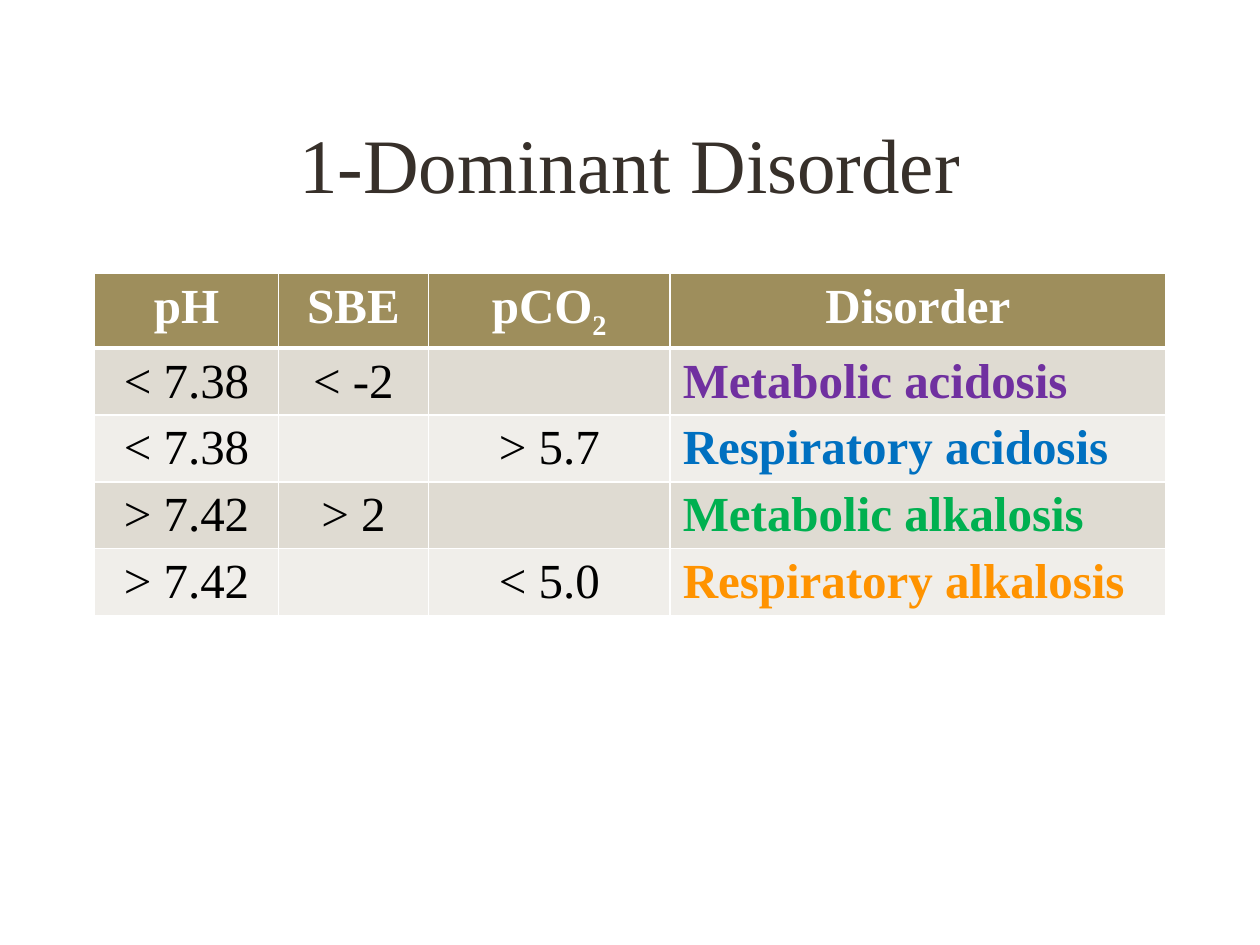
from dataclasses import dataclass

from lxml import etree
from pptx import Presentation
from pptx.dml.color import RGBColor
from pptx.enum.text import MSO_ANCHOR, PP_ALIGN
from pptx.oxml.ns import qn
from pptx.util import Inches, Pt

LEFT, CENTER = PP_ALIGN.LEFT, PP_ALIGN.CENTER
MIDDLE = MSO_ANCHOR.MIDDLE
TITLE_ONLY = 5


@dataclass(frozen=True)
class Theme:
    font: str = "Times New Roman"
    title_size: int = 44
    table_size: int = 28
    title: str = "37302A"
    header_fill: str = "9E8E5C"
    bands: tuple = ("DFDBD2", "F0EEEA")
    white: str = "FFFFFF"
    value: str = "000000"
    thin: int = 1
    thick: int = 3


THEME = Theme()
COLUMN_WIDTHS = (1.46, 1.19, 1.92, 3.93)
ROW_HEIGHT = 0.5
# Each heading is its text and its subscript
HEADINGS = (("pH", ""), ("SBE", ""), ("pCO", "2"), ("Disorder", ""))
# pH, SBE, pCO2, disorder, disorder colour
DISORDERS = (
    ("< 7.38", "< -2", "", "Metabolic acidosis", "7030A0"),
    ("< 7.38", "", "> 5.7", "Respiratory acidosis", "0070C0"),
    ("> 7.42", "> 2", "", "Metabolic alkalosis", "00B050"),
    ("> 7.42", "", "< 5.0", "Respiratory alkalosis", "FF9300"),
)


def add_run(paragraph, text, size, color, bold=False, subscript=False):
    run = paragraph.add_run()
    run.text = text
    formats = {"name": THEME.font, "size": Pt(size), "bold": bold}
    for attribute, value in formats.items():
        setattr(run.font, attribute, value)
    run.font.color.rgb = RGBColor.from_string(color)
    if subscript:
        run._r.get_or_add_rPr().set("baseline", "-25000")


def add_title(slide, text):
    title = slide.shapes.title
    place = {"left": 0.75, "top": 0.67, "width": 8.5, "height": 1.25}
    for attribute, value in place.items():
        setattr(title, attribute, Inches(value))
    title.text_frame.vertical_anchor = MIDDLE
    paragraph = title.text_frame.paragraphs[0]
    paragraph.alignment = CENTER
    add_run(paragraph, text, THEME.title_size, THEME.title)


def set_borders(cell, top, bottom):
    widths = {"L": THEME.thin, "R": THEME.thin, "T": top, "B": bottom}
    properties = cell._tc.get_or_add_tcPr()
    for side, width in widths.items():
        line = etree.SubElement(properties, qn(f"a:ln{side}"), w=str(Pt(width)))
        fill = etree.SubElement(line, qn("a:solidFill"))
        etree.SubElement(fill, qn("a:srgbClr"), val=THEME.white)


def style_cell(cell, fill, top=THEME.thin, bottom=THEME.thin):
    # Borders must come before the fill in the cell properties
    set_borders(cell, top, bottom)
    cell.fill.solid()
    cell.fill.fore_color.rgb = RGBColor.from_string(fill)


def write_cell(cell, text, color, bold=False, align=CENTER, subscript=""):
    paragraph = cell.text_frame.paragraphs[0]
    paragraph.alignment = align
    if text:
        add_run(paragraph, text, THEME.table_size, color, bold)
    if subscript:
        add_run(paragraph, subscript, THEME.table_size, color, bold, True)


def add_disorder_table(slide):
    row_count = len(DISORDERS) + 1
    table = slide.shapes.add_table(
        row_count, len(COLUMN_WIDTHS), Inches(0.75), Inches(2.17),
        Inches(sum(COLUMN_WIDTHS)), Inches(ROW_HEIGHT * row_count)).table
    for column, width in zip(table.columns, COLUMN_WIDTHS):
        column.width = Inches(width)

    # Header row
    for cell, (text, subscript) in zip(table.rows[0].cells, HEADINGS):
        style_cell(cell, THEME.header_fill, bottom=THEME.thick)
        write_cell(cell, text, THEME.white, bold=True, subscript=subscript)

    # Banded rows, each ending in its coloured disorder
    for index, (*values, disorder, color) in enumerate(DISORDERS):
        cells = list(table.rows[index + 1].cells)
        top = THEME.thin if index else THEME.thick
        for cell in cells:
            style_cell(cell, THEME.bands[index % 2], top=top)
        for cell, value in zip(cells, values):
            write_cell(cell, value, THEME.value)
        write_cell(cells[-1], disorder, color, bold=True, align=LEFT)


def main():
    presentation = Presentation()
    presentation.slide_width = Inches(10)
    presentation.slide_height = Inches(7.5)
    slide = presentation.slides.add_slide(presentation.slide_layouts[TITLE_ONLY])
    add_title(slide, "1-Dominant Disorder")
    add_disorder_table(slide)
    presentation.save("out.pptx")


if __name__ == "__main__":
    main()
